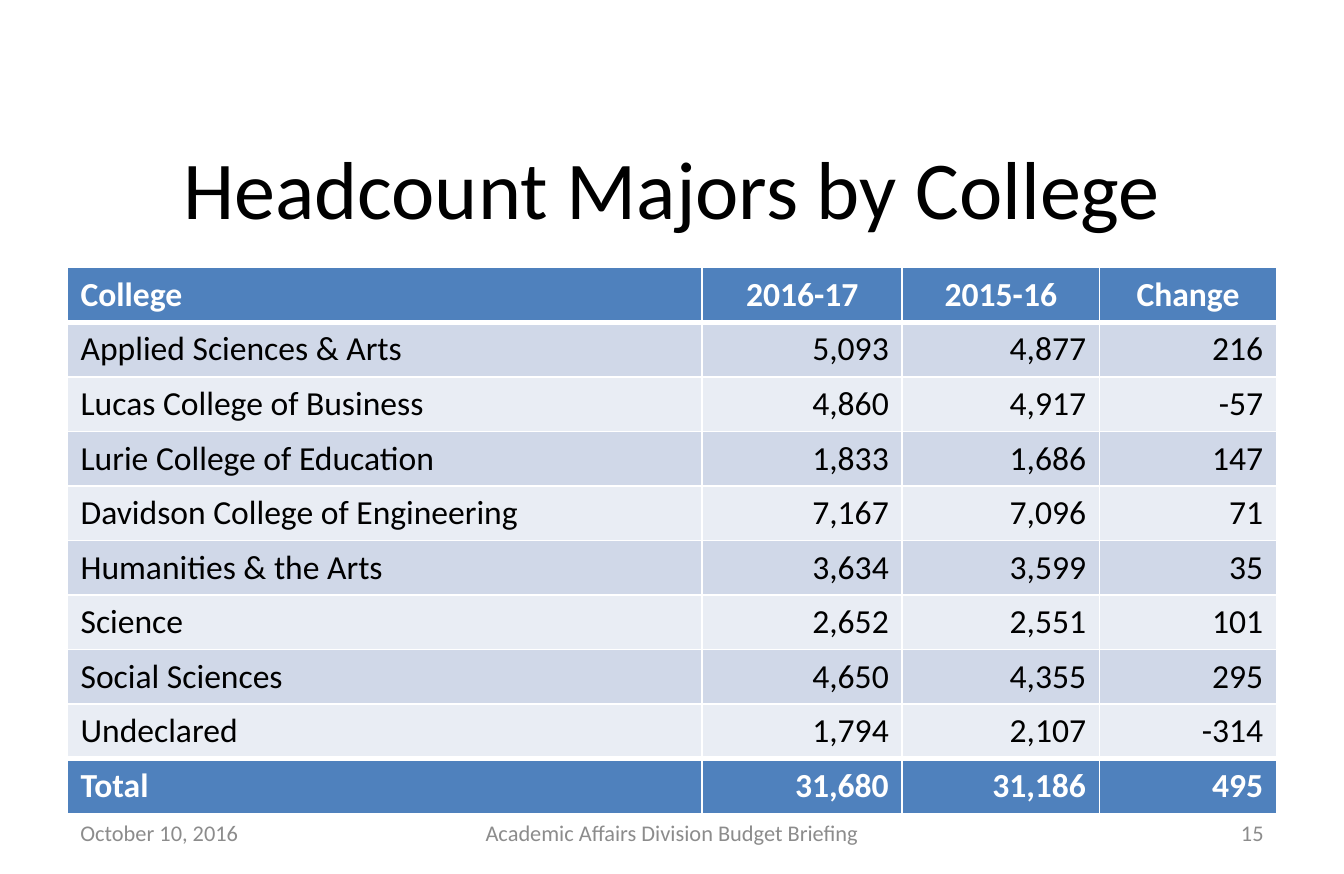
from lxml.etree import SubElement
from pptx import Presentation
from pptx.dml.color import RGBColor
from pptx.enum.text import MSO_ANCHOR, PP_ALIGN
from pptx.oxml.ns import qn
from pptx.util import Pt

BLACK = RGBColor(0x00, 0x00, 0x00)
WHITE = RGBColor(0xFF, 0xFF, 0xFF)
GRAY = RGBColor(0x8C, 0x8C, 0x8C)
BLUE = RGBColor(0x4F, 0x81, 0xBD)
BAND_DARK = RGBColor(0xD0, 0xD8, 0xE8)
BAND_LIGHT = RGBColor(0xE9, 0xED, 0xF4)

LEFT, CONTENT_WIDTH = 36, 648
COLUMN_WIDTHS = [340.2, 107.2, 105.7, 94.9]
ROW_HEIGHT = 29.25
HEADCOUNTS = [
    ["College", "2016-17", "2015-16", "Change"],
    ["Applied Sciences & Arts", "5,093", "4,877", "216"],
    ["Lucas College of Business", "4,860", "4,917", "-57"],
    ["Lurie College of Education", "1,833", "1,686", "147"],
    ["Davidson College of Engineering", "7,167", "7,096", "71"],
    ["Humanities & the Arts", "3,634", "3,599", "35"],
    ["Science", "2,652", "2,551", "101"],
    ["Social Sciences", "4,650", "4,355", "295"],
    ["Undeclared", "1,794", "2,107", "-314"],
    ["Total", "31,680", "31,186", "495"],
]
FOOTERS = [
    ("October 10, 2016", LEFT, 168, PP_ALIGN.LEFT),
    ("Academic Affairs Division Budget Briefing", 246, 228, PP_ALIGN.CENTER),
    ("15", 516, 168, PP_ALIGN.RIGHT),
]


class SlideBuilder:
    """Draws styled text and tables on one slide."""

    def __init__(self, slide, font_name="Calibri"):
        self.slide = slide
        self.font_name = font_name

    def format_text(self, frame, text, size, color, align, bold=False):
        paragraph = frame.paragraphs[0]
        paragraph.text = text
        paragraph.alignment = align
        style = {"name": self.font_name, "size": Pt(size), "bold": bold}
        for attribute, value in style.items():
            setattr(paragraph.font, attribute, value)
        paragraph.font.color.rgb = color

    def text(self, text, left, top, width, height, size, color, align):
        box = self.slide.shapes.add_textbox(Pt(left), Pt(top), Pt(width), Pt(height))
        frame = box.text_frame
        frame.word_wrap = True
        frame.vertical_anchor = MSO_ANCHOR.MIDDLE
        self.format_text(frame, text, size, color, align)

    def borders(self, cell, top, bottom):
        properties = cell._tc.get_or_add_tcPr()
        for side, width in {"L": 1, "R": 1, "T": top, "B": bottom}.items():
            line = SubElement(properties, qn(f"a:ln{side}"), w=str(Pt(width)))
            fill = SubElement(line, qn("a:solidFill"))
            SubElement(fill, qn("a:srgbClr"), val=str(WHITE))

    def table(self, rows, left, top, widths, row_height, size):
        last = len(rows) - 1
        table = self.slide.shapes.add_table(
            len(rows), len(widths), Pt(left), Pt(top),
            Pt(sum(widths)), Pt(row_height * len(rows))).table
        for column, width in zip(table.columns, widths):
            column.width = Pt(width)
        for r, values in enumerate(rows):
            table.rows[r].height = Pt(row_height)
            strong = r in (0, last)
            band = BAND_DARK if r % 2 else BAND_LIGHT
            number_align = PP_ALIGN.RIGHT if r else PP_ALIGN.CENTER
            for c, value in enumerate(values):
                cell = table.cell(r, c)
                self.borders(cell, 3 if r in (1, last) else 1,
                             3 if r in (0, last - 1) else 1)
                cell.fill.solid()
                cell.fill.fore_color.rgb = BLUE if strong else band
                self.format_text(cell.text_frame, value, size,
                                 WHITE if strong else BLACK,
                                 number_align if c else PP_ALIGN.LEFT, strong)


def main():
    presentation = Presentation()
    presentation.slide_width, presentation.slide_height = Pt(720), Pt(468)
    builder = SlideBuilder(presentation.slides.add_slide(presentation.slide_layouts[6]))
    builder.text("Headcount Majors by College", LEFT, 63.4, CONTENT_WIDTH, 72.7,
                 44, BLACK, PP_ALIGN.CENTER)
    builder.table(HEADCOUNTS, LEFT, 143.3, COLUMN_WIDTHS, ROW_HEIGHT, 18)
    for label, left, width, align in FOOTERS:
        builder.text(label, left, 433.5, width, 25, 12, GRAY, align)
    presentation.save("out.pptx")


if __name__ == "__main__":
    main()
